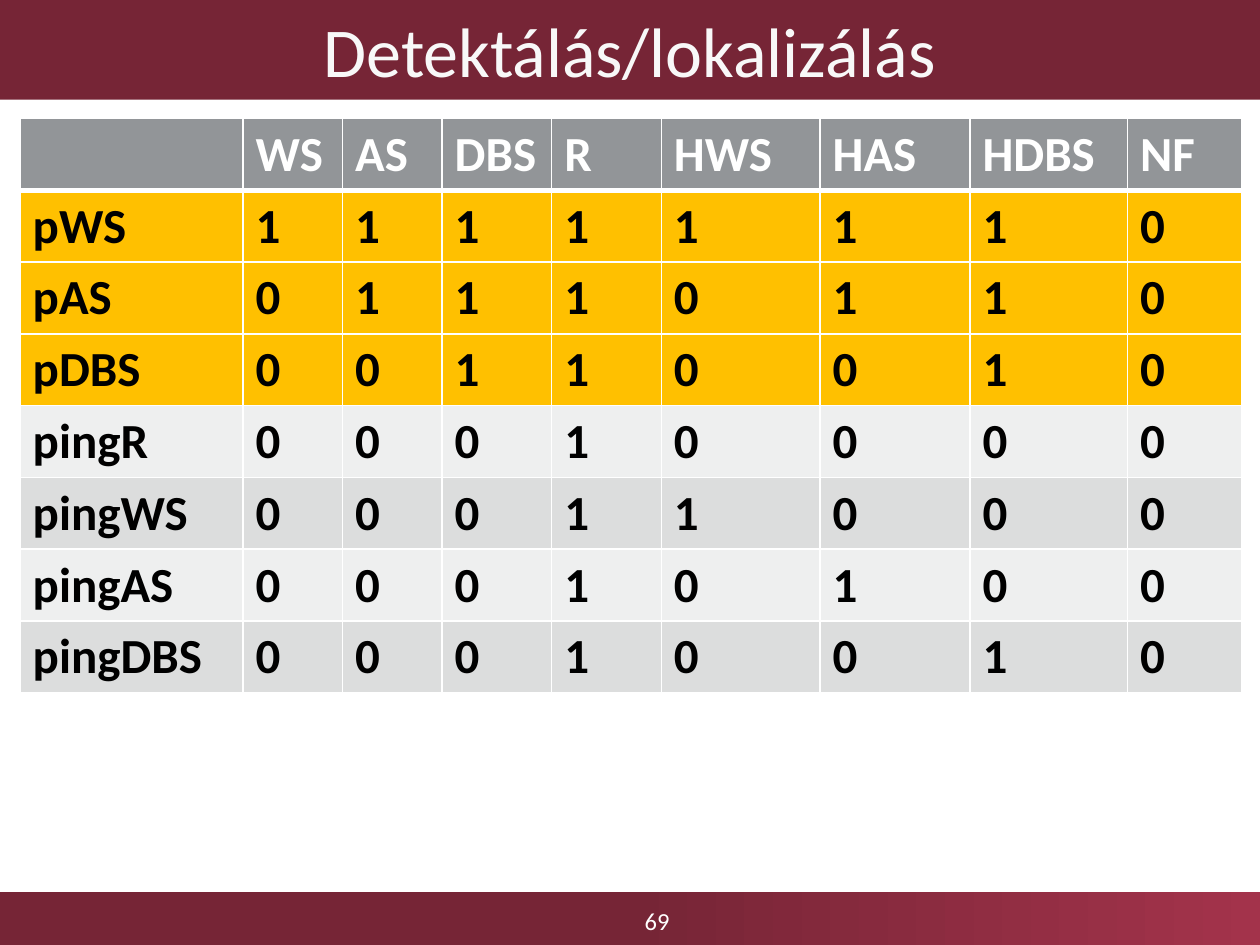
from lxml.etree import SubElement
from pptx import Presentation
from pptx.dml.color import RGBColor
from pptx.enum.shapes import MSO_SHAPE
from pptx.enum.text import MSO_ANCHOR, MSO_AUTO_SIZE, PP_ALIGN
from pptx.oxml.ns import qn
from pptx.util import Inches, Pt

C = {"wine": "762536", "rose": "A3334B", "white": "FFFFFF", "title": "F8F8F8",
     "head": "929598", "gold": "FFC000", "light": "EEEFEF", "mid": "DCDDDD",
     "black": "000000"}


def put(tf, text, size=28, color="black", bold=False, align=PP_ALIGN.LEFT):
    p = tf.paragraphs[0]
    p.alignment = align
    r = p.add_run()
    r.text = text
    r.font.name = "Calibri"
    r.font.size = Pt(size)
    r.font.bold = bold
    r.font.color.rgb = RGBColor.from_string(C[color])


def border(cell, side, width):
    ln = SubElement(cell._tc.get_or_add_tcPr(), qn(f"a:{side}"), w=str(Pt(width)))
    fill = SubElement(ln, qn("a:solidFill"))
    SubElement(fill, qn("a:srgbClr"), val=C["white"])


prs = Presentation()
prs.slide_width, prs.slide_height = Inches(10), Inches(7.5)
W, H = prs.slide_width, prs.slide_height
s = prs.slides.add_slide(prs.slide_layouts[5])

title = s.shapes.title
title.left, title.top, title.width, title.height = 0, 0, W, Inches(0.79)
title.fill.solid()
title.fill.fore_color.rgb = RGBColor.from_string(C["wine"])
tf = title.text_frame
tf.auto_size = MSO_AUTO_SIZE.NONE
tf.vertical_anchor = MSO_ANCHOR.MIDDLE
put(tf, "Detektálás/lokalizálás", size=40, color="title", align=PP_ALIGN.CENTER)

bar_h = Inches(0.42)
bar = s.shapes.add_shape(MSO_SHAPE.RECTANGLE, 0, H - bar_h, W, bar_h)
bar.shadow.inherit = False
bar.line.fill.background()
bar.fill.gradient()
bar.fill.gradient_angle = 0
for stop, pos, color in zip(bar.fill.gradient_stops, (0.5, 1), ("wine", "rose")):
    stop.position = pos
    stop.color.rgb = RGBColor.from_string(C[color])

number = s.shapes.add_textbox(Inches(3.59), Inches(7.11), Inches(3.25), Inches(0.39))
tf = number.text_frame
tf.word_wrap = True
tf.vertical_anchor = MSO_ANCHOR.MIDDLE
put(tf, "69", size=14, color="white", align=PP_ALIGN.CENTER)

faults = ["", "WS", "AS", "DBS", "R", "HWS", "HAS", "HDBS", "NF"]
probes = {"pWS": "11111110", "pAS": "01110110", "pDBS": "00110010",
          "pingR": "00010000", "pingWS": "00011000", "pingAS": "00010100",
          "pingDBS": "00010010"}
rows = [faults] + [[name, *bits] for name, bits in probes.items()]
fills = ["head"] + ["gold"] * 3 + ["light", "mid"] * 2
widths = [1.77, 0.79, 0.79, 0.87, 0.87, 1.26, 1.19, 1.25, 0.91]
row_h = Inches(0.57)

table = s.shapes.add_table(len(rows), len(widths), Inches(0.16), Inches(0.94),
                           Inches(sum(widths)), row_h * len(rows)).table
for col, width in zip(table.columns, widths):
    col.width = Inches(width)
for i, (row, fill) in enumerate(zip(rows, fills)):
    table.rows[i].height = row_h
    for j, text in enumerate(row):
        cell = table.cell(i, j)
        for side in ("lnL", "lnR", "lnT", "lnB"):
            border(cell, side, 3 if (i, side) in ((0, "lnB"), (1, "lnT")) else 1)
        cell.fill.solid()
        cell.fill.fore_color.rgb = RGBColor.from_string(C[fill])
        put(cell.text_frame, text, color="black" if i else "white", bold=True)

prs.save("out.pptx")
